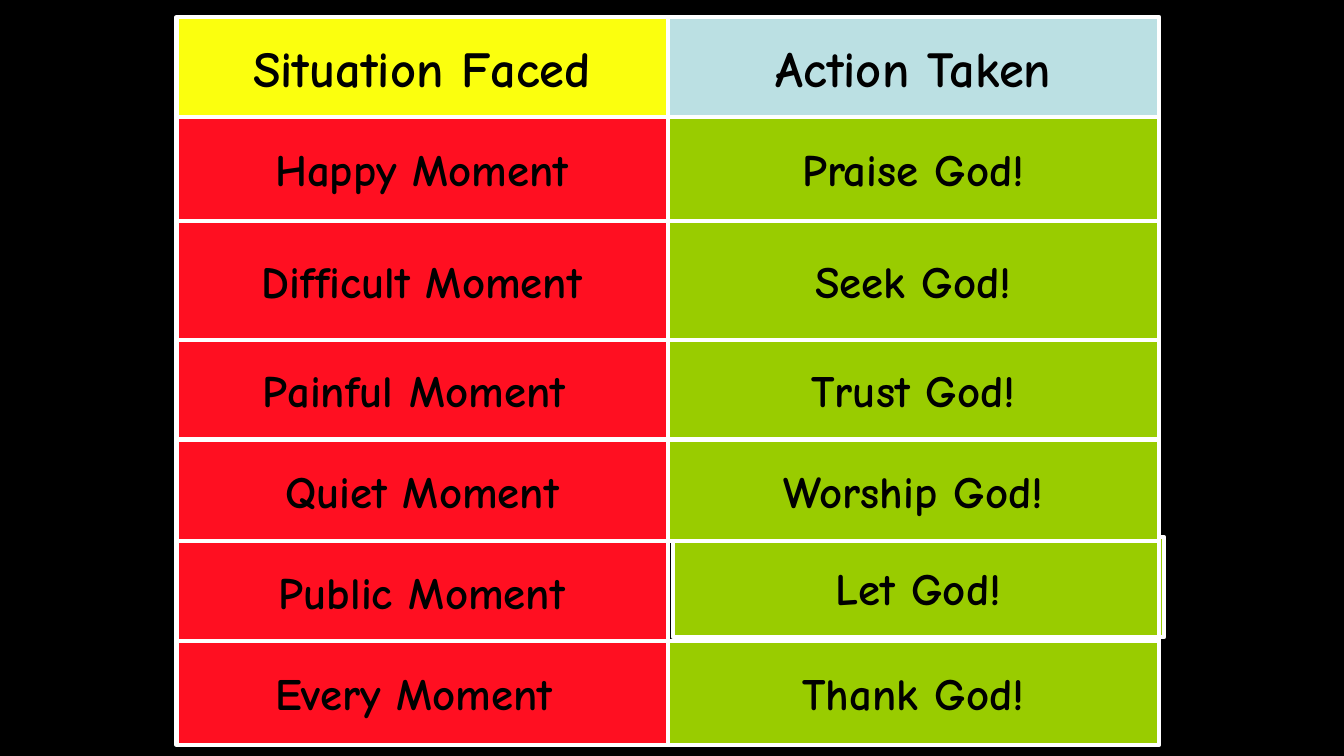
from itertools import accumulate
from lxml import etree
from pptx import Presentation
from pptx.dml.color import RGBColor
from pptx.enum.shapes import MSO_CONNECTOR, MSO_SHAPE
from pptx.enum.text import MSO_ANCHOR, PP_ALIGN
from pptx.oxml.ns import qn
from pptx.util import Pt

RECTANGLE = MSO_SHAPE.RECTANGLE
STRAIGHT = MSO_CONNECTOR.STRAIGHT
MIDDLE = MSO_ANCHOR.MIDDLE
CENTER = PP_ALIGN.CENTER

ROWS = [
    ("Situation Faced", "Action Taken"),
    ("Happy Moment", "Praise God!"),
    ("Difficult Moment", "Seek God!"),
    ("Painful Moment ", "Trust God!"),
    ("Quiet Moment", "Worship God!"),
    ("Public Moment", "Let God!"),
    ("Every Moment ", "Thank God!"),
]
ROW_HEIGHTS = [71.3, 74.2, 85, 71.3, 72.7, 71.3, 74.1]
COLUMN_WIDTH = 351
LEFT, TOP = 126, 12.2
NUDGES = {"Let God!": (3.6, -2.9)}

THEME = {
    "font": "Comic Neue",
    "background": "000000",
    "text": "000000",
    "line": "FFFFFF",
    "line_width": 3,
    "header_fills": ("FBFF0E", "BBE0E3"),
    "body_fills": ("FF0F21", "99CC00"),
    "header_size": 36,
    "body_size": 32,
}


def color(name):
    return RGBColor.from_string(name)


def style_line(line):
    line.color.rgb = color(THEME["line"])
    line.width = Pt(THEME["line_width"])


def add_cell(slide, text, left, top, height, fill, size):
    box = slide.shapes.add_shape(
        RECTANGLE, Pt(left), Pt(top), Pt(COLUMN_WIDTH), Pt(height))
    box.shadow.inherit = False
    box.fill.solid()
    box.fill.fore_color.rgb = color(fill)
    style_line(box.line)
    frame = box.text_frame
    frame.word_wrap = True
    frame.vertical_anchor = MIDDLE
    frame.text = text
    para = frame.paragraphs[0]
    para.alignment = CENTER
    font = para.runs[0].font
    font.name = THEME["font"]
    font.size = Pt(size)
    font.bold = True
    font.color.rgb = color(THEME["text"])


def add_rule(slide, x1, y1, x2, y2):
    rule = slide.shapes.add_connector(STRAIGHT, Pt(x1), Pt(y1), Pt(x2), Pt(y2))
    style_line(rule.line)
    etree.SubElement(rule._element.spPr, qn("a:effectLst"))


def main():
    deck = Presentation()
    deck.slide_width, deck.slide_height = Pt(960), Pt(540)
    slide = deck.slides.add_slide(deck.slide_layouts[6])
    slide.background.fill.solid()
    slide.background.fill.fore_color.rgb = color(THEME["background"])

    row_edges = list(accumulate(ROW_HEIGHTS, initial=TOP))
    column_edges = [LEFT + COLUMN_WIDTH * index for index in range(3)]

    for row in reversed(range(len(ROWS))):
        part = "body" if row else "header"
        for column in (1, 0):
            text = ROWS[row][column]
            shift_x, shift_y = NUDGES.get(text, (0, 0))
            add_cell(slide, text, column_edges[column] + shift_x,
                     row_edges[row] + shift_y, ROW_HEIGHTS[row],
                     THEME[part + "_fills"][column], THEME[part + "_size"])

    for y in row_edges:
        add_rule(slide, column_edges[0], y, column_edges[-1], y)
    for x in column_edges:
        add_rule(slide, x, row_edges[0], x, row_edges[-1])

    deck.save("out.pptx")


if __name__ == "__main__":
    main()
